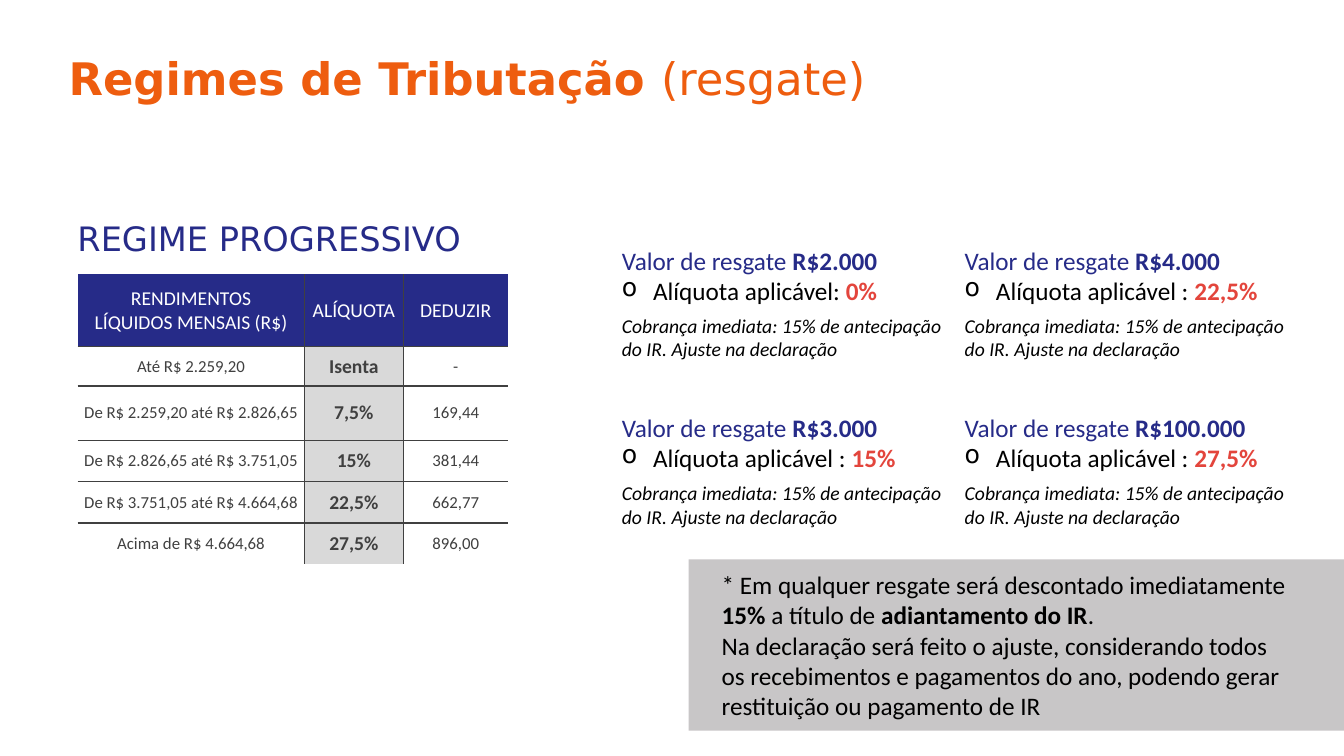
from dataclasses import dataclass

import lxml.etree
import pptx
import pptx.dml.color
import pptx.enum.shapes
import pptx.enum.text
import pptx.oxml.ns
import pptx.util

Inches = pptx.util.Inches
Pt = pptx.util.Pt
Anchor = pptx.enum.text.MSO_ANCHOR
Align = pptx.enum.text.PP_ALIGN
qn = pptx.oxml.ns.qn


@dataclass(frozen=True)
class Theme:
    heading_font: str = "DejaVu Sans"
    body_font: str = "Calibri"
    orange: str = "EE5D0F"
    navy: str = "262B88"
    red: str = "E3453C"
    black: str = "000000"
    white: str = "FFFFFF"
    graphite: str = "404040"
    rate_gray: str = "D9D9D9"
    panel_gray: str = "C8C6C7"
    title_size: int = 32
    subtitle_size: int = 24
    body_size: int = 18
    detail_size: int = 14
    bracket_size: int = 12
    border_width: int = 1


def rgb(code):
    return pptx.dml.color.RGBColor.from_string(code)


class SlideBuilder:
    def __init__(self, slide, theme):
        self.slide = slide
        self.theme = theme

    def run(self, paragraph, text, size, color, bold=False, italic=False, font=None):
        run = paragraph.add_run()
        run.text = text
        run.font.name = font or self.theme.body_font
        run.font.size = Pt(size)
        run.font.bold = bold
        run.font.italic = italic
        run.font.color.rgb = rgb(color)

    def title(self, emphasis, rest, left, top, width, height):
        heading = self.slide.shapes.title
        heading.left, heading.top = Inches(left), Inches(top)
        heading.width, heading.height = Inches(width), Inches(height)
        frame = heading.text_frame
        frame.margin_left = frame.margin_right = 0
        frame.margin_top = frame.margin_bottom = 0
        frame.vertical_anchor = Anchor.TOP
        frame.auto_size = pptx.enum.text.MSO_AUTO_SIZE.NONE
        paragraph = frame.paragraphs[0]
        paragraph.alignment = Align.LEFT
        paragraph.line_spacing = 1.0
        paragraph.space_before = Pt(0)
        for text, bold in ((emphasis, True), (rest, False)):
            self.run(paragraph, text, self.theme.title_size, self.theme.orange,
                     bold, font=self.theme.heading_font)

    def text_frame(self, left, top, width, height):
        box = self.slide.shapes.add_textbox(
            Inches(left), Inches(top), Inches(width), Inches(height))
        box.text_frame.word_wrap = True
        return box.text_frame

    def subtitle(self, text, left, top, width, height):
        frame = self.text_frame(left, top, width, height)
        frame.vertical_anchor = Anchor.MIDDLE
        self.run(frame.paragraphs[0], text, self.theme.subtitle_size,
                 self.theme.navy, font=self.theme.heading_font)

    def panel(self, left, top, width, height):
        panel = self.slide.shapes.add_shape(
            pptx.enum.shapes.MSO_SHAPE.RECTANGLE,
            Inches(left), Inches(top), Inches(width), Inches(height))
        panel.shadow.inherit = False
        panel.fill.solid()
        panel.fill.fore_color.rgb = rgb(self.theme.panel_gray)
        panel.line.fill.background()

    def note(self, paragraphs, left, top, width, height):
        """Write paragraphs given as lists of (text, bold) pairs."""
        frame = self.text_frame(left, top, width, height)
        for index, pieces in enumerate(paragraphs):
            paragraph = frame.add_paragraph() if index else frame.paragraphs[0]
            for text, bold in pieces:
                self.run(paragraph, text, self.theme.body_size, self.theme.black, bold)

    def withdrawal(self, amount, rate_label, rate, charge, left, top, width, height):
        theme = self.theme
        frame = self.text_frame(left, top, width, height)
        heading = frame.paragraphs[0]
        self.run(heading, "Valor de resgate ", theme.body_size, theme.navy)
        self.run(heading, amount, theme.body_size, theme.navy, bold=True)

        rate_item = frame.add_paragraph()
        rate_item.space_after = Pt(6)
        self.bullet(rate_item, "o", 0.31)
        self.run(rate_item, rate_label, theme.body_size, theme.black)
        self.run(rate_item, rate, theme.body_size, theme.red, bold=True)

        detail = frame.add_paragraph()
        detail.space_after = Pt(6)
        self.run(detail, charge, theme.detail_size, theme.black, italic=True)

    def bullet(self, paragraph, mark, indent):
        properties = paragraph._p.get_or_add_pPr()
        properties.set("marL", str(Inches(indent)))
        properties.set("indent", str(-Inches(indent)))
        lxml.etree.SubElement(properties, qn("a:buChar"), char=mark)

    def cell_border(self, cell, edge, visible):
        """Draw or clear one edge; edges come before the fill, in L, R, T, B order."""
        line = lxml.etree.SubElement(
            cell._tc.get_or_add_tcPr(), qn("a:ln" + edge),
            w=str(Pt(self.theme.border_width)))
        if visible:
            fill = lxml.etree.SubElement(line, qn("a:solidFill"))
            lxml.etree.SubElement(fill, qn("a:srgbClr"), val=self.theme.graphite)
        else:
            lxml.etree.SubElement(line, qn("a:noFill"))

    def tax_table(self, rows, left, top, widths, heights):
        theme = self.theme
        table = self.slide.shapes.add_table(
            len(rows), len(widths), Inches(left), Inches(top),
            Inches(sum(widths)), Inches(sum(heights))).table
        table.first_row = table.horz_banding = False
        for column, width in zip(table.columns, widths):
            column.width = Inches(width)
        for row, height in zip(table.rows, heights):
            row.height = Inches(height)
        last_row, last_column = len(rows) - 1, len(widths) - 1
        for r, texts in enumerate(rows):
            for c, text in enumerate(texts):
                cell = table.cell(r, c)
                inner_edges = {"L": c > 0, "R": c < last_column,
                               "T": r > 0, "B": r < last_row}
                for edge, visible in inner_edges.items():
                    self.cell_border(cell, edge, visible)
                is_header, is_rate = r == 0, c == 1
                if is_header or is_rate:
                    cell.fill.solid()
                    cell.fill.fore_color.rgb = rgb(
                        theme.navy if is_header else theme.rate_gray)
                else:
                    cell.fill.background()
                cell.vertical_anchor = Anchor.MIDDLE
                cell.margin_left = cell.margin_right = Inches(0.05)
                cell.margin_top = cell.margin_bottom = Inches(0.04)
                paragraph = cell.text_frame.paragraphs[0]
                paragraph.alignment = Align.CENTER
                size = theme.detail_size if is_header or is_rate else theme.bracket_size
                color = theme.white if is_header else theme.graphite
                for index, line in enumerate(text.split("\n")):
                    if index:
                        paragraph.add_line_break()
                    self.run(paragraph, line, size, color, is_rate and not is_header)


TAX_ROWS = [
    ("RENDIMENTOS\nLÍQUIDOS MENSAIS (R$)", "ALÍQUOTA", "DEDUZIR"),
    ("Até R$ 2.259,20", "Isenta", "-"),
    ("De R$ 2.259,20 até R$ 2.826,65", "7,5%", "169,44"),
    ("De R$ 2.826,65 até R$ 3.751,05", "15%", "381,44"),
    ("De R$ 3.751,05 até R$ 4.664,68", "22,5%", "662,77"),
    ("Acima de R$ 4.664,68", "27,5%", "896,00"),
]
WITHDRAWALS = [
    ("R$2.000", "Alíquota aplicável: ", "0%"),
    ("R$4.000", "Alíquota aplicável : ", "22,5%"),
    ("R$3.000", "Alíquota aplicável : ", "15%"),
    ("R$100.000", "Alíquota aplicável : ", "27,5%"),
]
CHARGE = "Cobrança imediata: 15% de antecipação do IR. Ajuste na declaração"
NOTE = [
    [("* Em qualquer resgate será descontado imediatamente ", False), ("15%", True),
     (" a título de ", False), ("adiantamento do IR", True), (".", False)],
    [("Na declaração será feito o ajuste, considerando todos os recebimentos e "
      "pagamentos do ano, podendo gerar restituição ou pagamento de IR", False)],
]


def main():
    presentation = pptx.Presentation()
    presentation.slide_width = Inches(13.33)
    presentation.slide_height = Inches(7.5)
    title_only = presentation.slide_layouts[5]
    builder = SlideBuilder(presentation.slides.add_slide(title_only), Theme())

    builder.title("Regimes de Tributação ", "(resgate)", 0.68, 0.5, 9.48, 0.54)
    builder.panel(6.83, 5.55, 6.5, 1.7)
    builder.subtitle("REGIME PROGRESSIVO", 0.67, 2.08, 4.26, 0.57)
    builder.tax_table(TAX_ROWS, 0.77, 2.72, widths=(2.25, 0.98, 1.04),
                      heights=(0.72, 0.39, 0.54, 0.41, 0.41, 0.41))
    card_width, row_pitch = 3.4, 1.66
    for index, (amount, rate_label, rate) in enumerate(WITHDRAWALS):
        row, column = divmod(index, 2)
        builder.withdrawal(amount, rate_label, rate, CHARGE,
                           6.07 + column * card_width, 2.38 + row * row_pitch,
                           card_width, 1.26)
    builder.note(NOTE, 7.06, 5.6, 5.86, 1.62)
    presentation.save("out.pptx")


if __name__ == "__main__":
    main()
